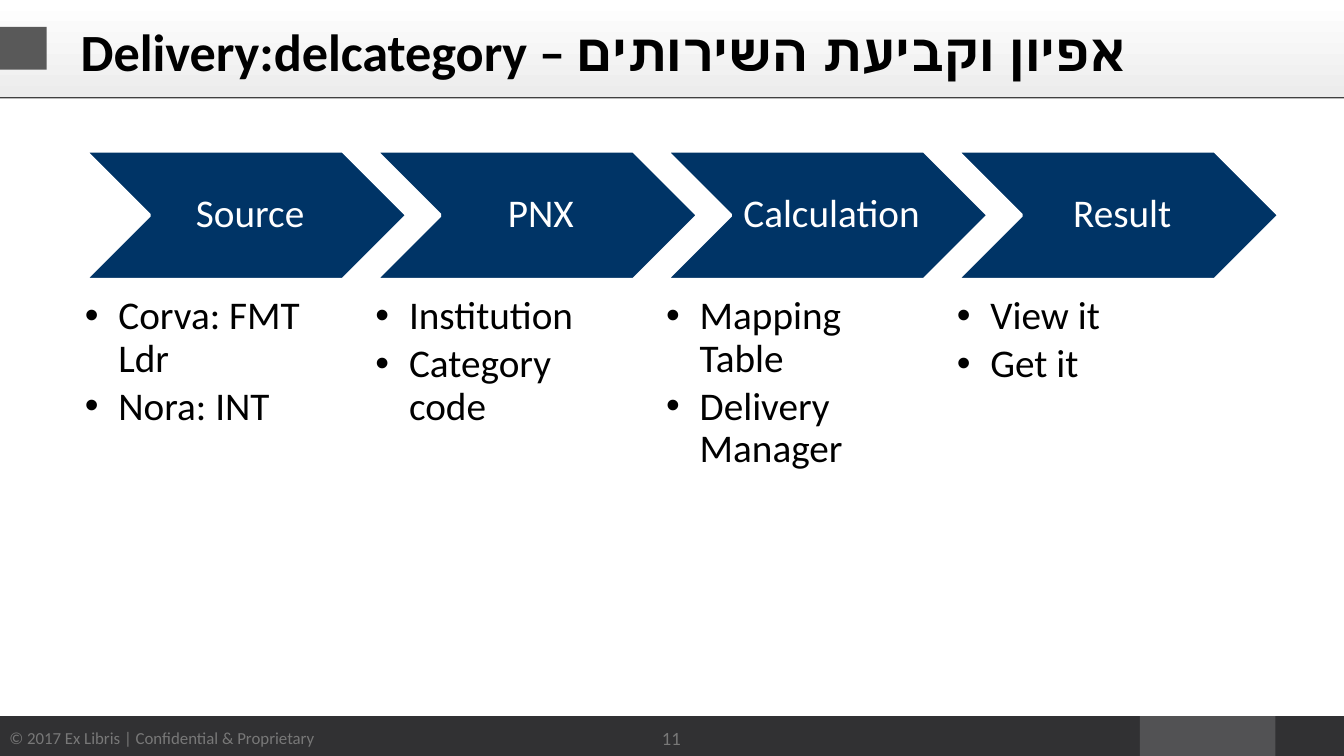
from lxml import etree
from pptx import Presentation
from pptx.dml.color import RGBColor as RGB
from pptx.enum.shapes import MSO_SHAPE as SHAPE
from pptx.enum.text import MSO_ANCHOR as ANCHOR, MSO_AUTO_SIZE as FIT, PP_ALIGN as ALIGN
from pptx.oxml.ns import qn
from pptx.util import Pt

WIDE, HIGH = 720, 405
FONT = "Calibri"
INK = {
    "black": "000000", "white": "FFFFFF", "navy": "003466", "pale": "ECECEC",
    "rule": "404040", "tab": "595959", "foot": "313133", "block": "525254",
    "note": "787878",
}
STEPS = [
    ("Source", ["Corva: FMT Ldr", "Nora: INT"]),
    ("PNX", ["Institution", "Category code"]),
    ("Calculation", ["Mapping Table", "Delivery Manager"]),
    ("Result", ["View it", "Get it"]),
]


def ink(name):
    return RGB.from_string(INK[name])


def pts(*box):
    return [Pt(n) for n in box]


def style(par, size, color, bold=False):
    for run in par.runs:
        run.font.name = FONT
        run.font.size = Pt(size)
        run.font.bold = bold
        run.font.color.rgb = ink(color)


def pad(frame, left, top, right, bottom):
    frame.margin_left, frame.margin_top = Pt(left), Pt(top)
    frame.margin_right, frame.margin_bottom = Pt(right), Pt(bottom)


def block(slide, box, color, kind=SHAPE.RECTANGLE):
    shape = slide.shapes.add_shape(kind, *pts(*box))
    shape.shadow.inherit = False
    shape.fill.solid()
    shape.fill.fore_color.rgb = ink(color)
    shape.line.fill.background()
    return shape


def label(slide, box, text, size, color):
    frame = slide.shapes.add_textbox(*pts(*box)).text_frame
    frame.text = text
    frame.vertical_anchor = ANCHOR.MIDDLE
    par = frame.paragraphs[0]
    par.alignment = ALIGN.CENTER
    style(par, size, color)
    return frame


def header(slide, box, text):
    x, y, w, h = box
    band = block(slide, box, "white")
    band.fill.gradient()
    band.fill.gradient_angle = 270
    for stop, name in zip(band.fill.gradient_stops, ("white", "pale")):
        stop.color.rgb = ink(name)
    block(slide, (x, y + 14.4, 25, 23), "tab")
    block(slide, (x, y + h, w, 0.7), "rule")

    title = slide.shapes.title
    title.left, title.top, title.width, title.height = pts(x + 36, y + 4.3, w - 72, 45.4)
    # The band must lie behind the title
    title._element.getparent().append(title._element)
    frame = title.text_frame
    frame.text = text
    frame.word_wrap = True
    frame.vertical_anchor = ANCHOR.MIDDLE
    par = frame.paragraphs[0]
    par.alignment = ALIGN.LEFT
    style(par, 28, "black", bold=True)


def footer(slide, box, note, page):
    x, y, w, h = box
    block(slide, box, "foot")
    block(slide, (x + 610.6, y, 72.7, h), "block")
    frame = label(slide, (x - 3, y + 2.4, 179.3, 18), note, 9, "note")
    frame.word_wrap = False
    frame.auto_size = FIT.SHAPE_TO_FIT_TEXT
    frame = label(slide, (x + 338.4, y - 2.7, 42.5, 28.8), page, 10, "note")
    frame.word_wrap = True


def bullet(par):
    props = par._p.get_or_add_pPr()
    props.set("marL", str(Pt(18)))
    props.set("indent", str(Pt(-18)))
    etree.SubElement(props, qn("a:buFont"), typeface="Arial")
    etree.SubElement(props, qn("a:buChar"), char="•")


def step(slide, box, name, items):
    """Chevron with its bullet list below."""
    x, y, w, h = box
    arrow = block(slide, box, "navy", SHAPE.CHEVRON)
    arrow.line.color.rgb = ink("white")
    arrow.line.width = Pt(2)
    frame = arrow.text_frame
    frame.text = name
    frame.word_wrap = False
    frame.vertical_anchor = ANCHOR.MIDDLE
    pad(frame, 6.5, 2, 2, 2)
    par = frame.paragraphs[0]
    par.alignment = ALIGN.CENTER
    par.line_spacing = 0.9
    style(par, 21, "white")

    frame = slide.shapes.add_textbox(*pts(x, y + h + 8.6, w * 0.8, 98)).text_frame
    frame.word_wrap = True
    pad(frame, 0, 0, 0, 0)
    for i, item in enumerate(items):
        par = frame.add_paragraph() if i else frame.paragraphs[0]
        par.text = item
        bullet(par)
        par.line_spacing = 0.9
        par.space_after = Pt(3)
        style(par, 21, "black")


def flow(slide, box, steps):
    x, y, w, h = box
    size = 172.8
    pitch = (w - size) / (len(steps) - 1)
    for i, (name, items) in enumerate(steps):
        step(slide, (x + i * pitch, y, size, h), name, items)


def main():
    deck = Presentation()
    deck.slide_width, deck.slide_height = pts(WIDE, HIGH)
    slide = deck.slides.add_slide(deck.slide_layouts[5])
    footer(slide, (0, 383.7, WIDE, HIGH - 383.7),
           "© 2017 Ex Libris | Confidential & Proprietary", "11")
    header(slide, (0, 0, WIDE, 52), "Delivery:delcategory – אפיון וקביעת השירותים")
    flow(slide, (45.4, 80.8, 640, 69.1), STEPS)
    deck.save("out.pptx")


if __name__ == "__main__":
    main()
